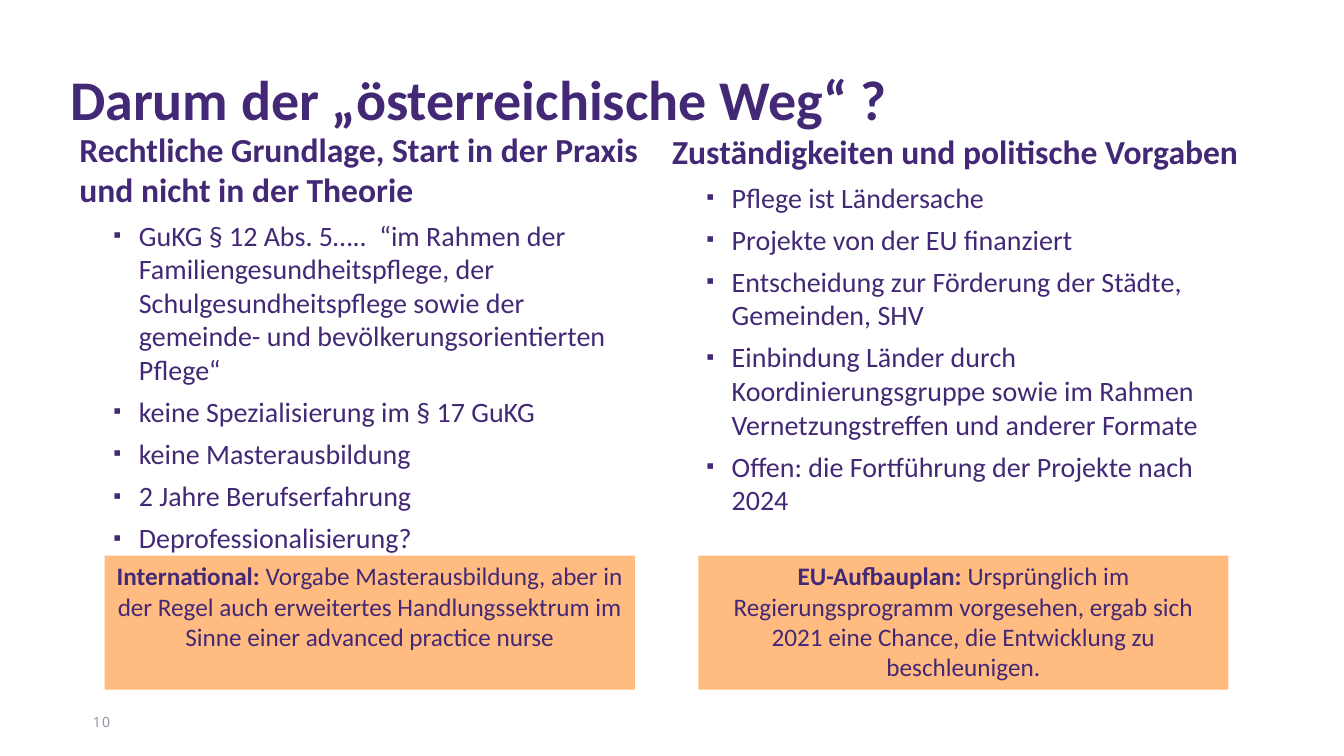
from lxml import etree
from pptx import Presentation
from pptx.dml.color import RGBColor
from pptx.enum import shapes, text
from pptx.oxml import ns
from pptx.util import Cm, Pt

COLORS = {"violet": "432875", "orange": "FFBB80", "gray": "948EA6"}
BOX_TOP, BOX_WIDTH, BOX_HEIGHT = Cm(14), Cm(13.36), Cm(3.38)

# Content: (left, top, width, height, space before heading, heading, items)
COLUMNS = [
    (Cm(2), Cm(3.12), Cm(14.4), Cm(12.09), 0,
     "Rechtliche Grundlage, Start in der Praxis und nicht in der Theorie",
     ["GuKG § 12 Abs. 5…..  “im Rahmen der Familiengesundheitspflege, der "
      "Schulgesundheitspflege sowie der gemeinde- und "
      "bevölkerungsorientierten Pflege“",
      "keine Spezialisierung im § 17 GuKG",
      "keine Masterausbildung",
      "2 Jahre Berufserfahrung",
      "Deprofessionalisierung?"]),
    (Cm(16.94), Cm(3.18), Cm(14.5), Cm(12.04), 10,
     "Zuständigkeiten und politische Vorgaben",
     ["Pflege ist Ländersache",
      "Projekte von der EU finanziert",
      "Entscheidung zur Förderung der Städte, Gemeinden, SHV",
      "Einbindung Länder durch Koordinierungsgruppe sowie im Rahmen "
      "Vernetzungstreffen und anderer Formate",
      "Offen: die Fortführung der Projekte nach 2024"]),
]
BOXES = [
    (Cm(2.64), "International: ",
     "Vorgabe Masterausbildung, aber in der Regel auch erweitertes "
     "Handlungssektrum im Sinne einer advanced practice nurse"),
    (Cm(17.6), "EU-Aufbauplan: ",
     "Ursprünglich im Regierungsprogramm vorgesehen, ergab sich 2021 eine "
     "Chance, die Entwicklung zu beschleunigen."),
]


def add_text(p, words, size=20, bold=False, font="Calibri", color="violet"):
    r = p.add_run()
    r.text = words
    r.font.size, r.font.bold, r.font.name = Pt(size), bold, font
    r.font.color.rgb = RGBColor.from_string(COLORS[color])
    return r


def format_paragraph(p, align=text.PP_ALIGN.LEFT, line=1.0, before=0, after=0):
    p.alignment, p.line_spacing = align, line
    p.space_before, p.space_after = Pt(before), Pt(after)


def format_frame(tf, anchor=text.MSO_ANCHOR.TOP, insets=(0.25, 0.13, 0.25, 0.13)):
    tf.word_wrap, tf.auto_size = True, text.MSO_AUTO_SIZE.NONE
    tf.vertical_anchor = anchor
    (tf.margin_left, tf.margin_top,
     tf.margin_right, tf.margin_bottom) = map(Cm, insets)


def place(sp, left, top, width, height):
    sp.left, sp.top, sp.width, sp.height = left, top, width, height


def set_bullet(p, char=None):
    """Give the paragraph a hanging bullet, or none."""
    pPr = p._p.get_or_add_pPr()
    pPr.set("marL", str(Cm(1.5) if char else 0))
    pPr.set("indent", str(-Cm(0.64) if char else 0))
    if not char:
        etree.SubElement(pPr, ns.qn("a:buNone"))
        return
    clr = etree.SubElement(pPr, ns.qn("a:buClr"))
    etree.SubElement(clr, ns.qn("a:srgbClr"), val=COLORS["violet"])
    etree.SubElement(pPr, ns.qn("a:buSzPct"), val="80000")
    etree.SubElement(pPr, ns.qn("a:buChar"), char=char)


def fill_title(sp, words):
    place(sp, Cm(1.52), Cm(0.91), Cm(31.8), Cm(2.36))
    format_frame(sp.text_frame)
    p = sp.text_frame.paragraphs[0]
    format_paragraph(p, line=1.35)
    add_text(p, words, size=40, bold=True)


def fill_column(sp, left, top, width, height, before, heading, items):
    place(sp, left, top, width, height)
    tf = sp.text_frame
    format_frame(tf, insets=(0, 0.13, 0.2, 0.13))
    p = tf.paragraphs[0]
    format_paragraph(p, before=before, after=6)
    set_bullet(p)
    add_text(p, heading, size=24, bold=True)
    for item in items:
        p = tf.add_paragraph()
        p.level = 1
        format_paragraph(p, after=6)
        set_bullet(p, "▪")
        add_text(p, item)


def add_box(s, left, label, words):
    sp = s.shapes.add_shape(shapes.MSO_SHAPE.RECTANGLE, left, BOX_TOP,
                            BOX_WIDTH, BOX_HEIGHT)
    sp.shadow.inherit = False
    sp.fill.solid()
    sp.fill.fore_color.rgb = RGBColor.from_string(COLORS["orange"])
    sp.line.fill.background()
    format_frame(sp.text_frame)
    p = sp.text_frame.paragraphs[0]
    format_paragraph(p, align=text.PP_ALIGN.CENTER)
    add_text(p, label, size=18, bold=True)
    add_text(p, words, size=18)


def add_page_number(s, number):
    sp = s.shapes.add_textbox(Cm(2.34), Cm(17.65), Cm(1.63), Cm(1.02))
    format_frame(sp.text_frame, text.MSO_ANCHOR.MIDDLE, (0, 0, 0, 0))
    p = sp.text_frame.paragraphs[0]
    format_paragraph(p, line=1.1)
    r = add_text(p, number, size=10, font="Open Sans", color="gray")
    r._r.get_or_add_rPr().set("spc", "100")


def main():
    prs = Presentation()
    prs.slide_width, prs.slide_height = Cm(33.87), Cm(19.05)
    s = prs.slides.add_slide(prs.slide_layouts.get_by_name("Two Content"))

    # Title and the two lists
    fill_title(s.shapes.title, "Darum der „österreichische Weg“ ?")
    for index, column in enumerate(COLUMNS, start=1):
        fill_column(s.placeholders[index], *column)

    # Highlighted boxes and page number
    for box in BOXES:
        add_box(s, *box)
    add_page_number(s, "10")

    prs.save("out.pptx")


if __name__ == "__main__":
    main()
